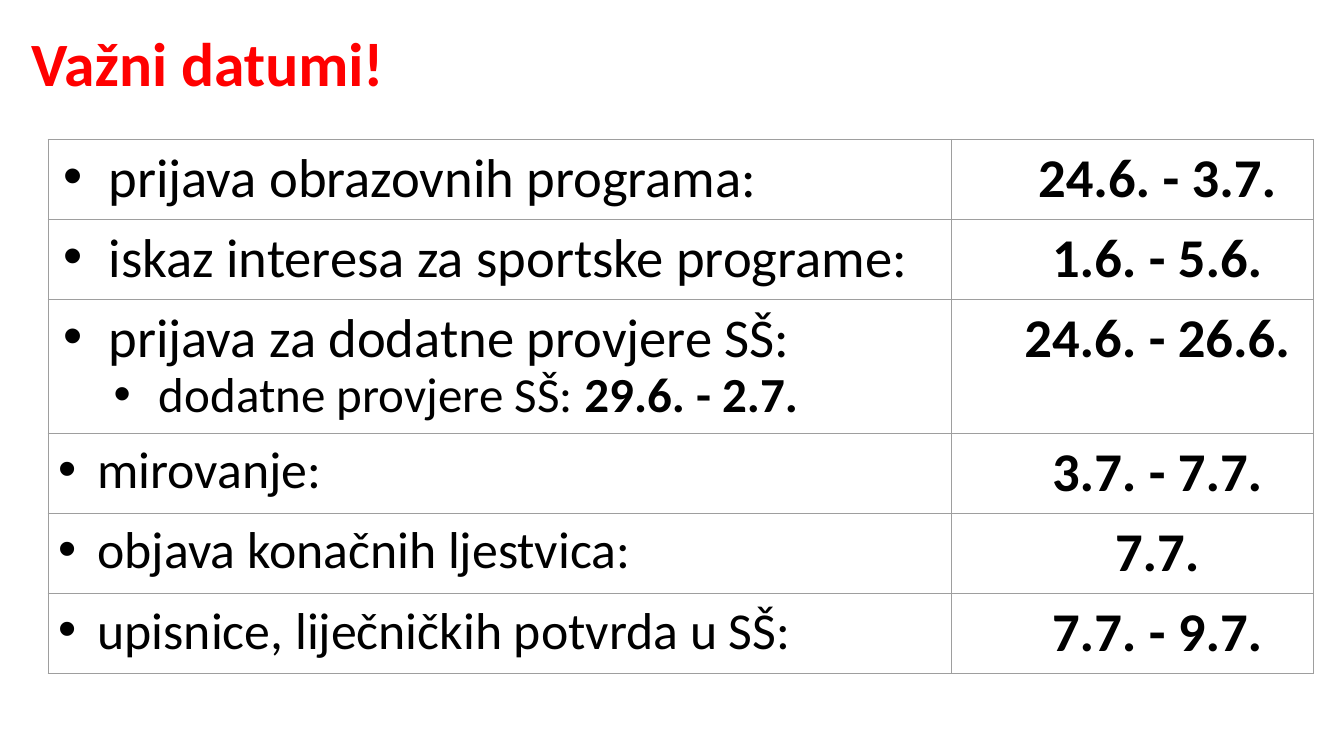
from lxml import etree
from pptx import Presentation
from pptx import util as u
from pptx.dml import color
from pptx.enum import text
from pptx.oxml import ns

FONT = "Calibri"
BLACK, RED, GREY = "000000", "FF0000", "9E9E9E"
ROW_HEIGHT, TALL_ROW_HEIGHT = 57.1, 95.7

# Bullet styles: level, left margin, hanging indent, font size
MAIN = (0, 36, -32.4, 39)
SUB = (1, 72, -32.4, 35)
SECOND = (1, 28.1, -33.8, 37)

# Each row: bulleted lines (style, plain text, bold text), then the date
DATES = [
    ([(MAIN, "prijava obrazovnih programa:", "")], "24.6. - 3.7."),
    ([(MAIN, "iskaz interesa za sportske programe:", "")], "1.6. - 5.6."),
    ([(MAIN, "prijava za dodatne provjere SŠ:", ""),
      (SUB, "dodatne provjere SŠ: ", "29.6. - 2.7.")], "24.6. - 26.6."),
    ([(SECOND, "mirovanje:", "")], "3.7. - 7.7."),
    ([(SECOND, "objava konačnih ljestvica:", "")], "7.7."),
    ([(SECOND, "upisnice, liječničkih potvrda u SŠ:", "")], "7.7. - 9.7."),
]


def rgb(value):
    return color.RGBColor.from_string(value)


def add_run(paragraph, words, size, bold=False, fill=BLACK):
    run = paragraph.add_run()
    run.text = words
    run.font.name = FONT
    run.font.size = u.Pt(size)
    run.font.bold = bold
    run.font.color.rgb = rgb(fill)


def add_xml(parent, tag, **attributes):
    return etree.SubElement(parent, ns.qn(tag), attributes)


def set_indent(paragraph, left, first):
    properties = paragraph._p.get_or_add_pPr()
    properties.set("marL", str(u.Pt(left)))
    properties.set("indent", str(u.Pt(first)))
    return properties


def write_bullet(paragraph, style, plain, bold):
    level, left, first, size = style
    properties = set_indent(paragraph, left, first)
    add_xml(add_xml(properties, "a:buClr"), "a:srgbClr", val=BLACK)
    add_xml(properties, "a:buFont", typeface="Arial")
    add_xml(properties, "a:buChar", char="•")
    paragraph.level = level
    paragraph.line_spacing = 0.9
    paragraph.alignment = text.PP_ALIGN.LEFT
    add_run(paragraph, plain, size)
    if bold:
        add_run(paragraph, bold, size, bold=True)


def write_date(paragraph, date):
    set_indent(paragraph, 36, 0)
    paragraph.alignment = text.PP_ALIGN.CENTER
    paragraph.line_spacing = 0.9
    add_run(paragraph, date, 39, bold=True)


def format_cell(cell):
    """Clear the fill, set even margins and draw a thin grey border."""
    cell.fill.background()
    cell.margin_left = cell.margin_right = u.Pt(7.2)
    cell.margin_top = cell.margin_bottom = u.Pt(7.2)
    properties = cell._tc.get_or_add_tcPr()
    for position, side in enumerate(("a:lnL", "a:lnR", "a:lnT", "a:lnB")):
        border = add_xml(properties, side, w=str(u.Pt(0.75)))
        add_xml(add_xml(border, "a:solidFill"), "a:srgbClr", val=GREY)
        properties.insert(position, border)


def place_title(slide, left, top, width, height):
    title = slide.shapes.title
    title.left, title.top = u.Pt(left), u.Pt(top)
    title.width, title.height = u.Pt(width), u.Pt(height)
    frame = title.text_frame
    frame.auto_size = text.MSO_AUTO_SIZE.NONE
    frame.vertical_anchor = text.MSO_ANCHOR.MIDDLE
    paragraph = frame.paragraphs[0]
    paragraph.alignment = text.PP_ALIGN.LEFT
    paragraph.line_spacing = 0.9
    add_run(paragraph, "Važni datumi!", 44, bold=True, fill=RED)


def place_dates(slide, left, top, width, height, date_width):
    table = slide.shapes.add_table(
        len(DATES), 2, u.Pt(left), u.Pt(top), u.Pt(width), u.Pt(height)).table
    table.first_row = table.horz_banding = False
    table.columns[0].width = u.Pt(width - date_width)
    table.columns[1].width = u.Pt(date_width)
    for row, (lines, date) in zip(table.rows, DATES):
        row.height = u.Pt(TALL_ROW_HEIGHT if len(lines) > 1 else ROW_HEIGHT)
        topic_cell, date_cell = row.cells
        for number, line in enumerate(lines):
            frame = topic_cell.text_frame
            paragraph = frame.add_paragraph() if number else frame.paragraphs[0]
            write_bullet(paragraph, *line)
        write_date(date_cell.text_frame.paragraphs[0], date)
        format_cell(topic_cell)
        format_cell(date_cell)


def main():
    presentation = Presentation()
    presentation.slide_width, presentation.slide_height = u.Pt(960), u.Pt(540)
    slide = presentation.slides.add_slide(presentation.slide_layouts[5])
    place_title(slide, 15.1, -5, 828, 104.4)
    place_dates(slide, 34.3, 99.5, 903.6, 381.2, date_width=258.5)
    presentation.save("out.pptx")


if __name__ == "__main__":
    main()
